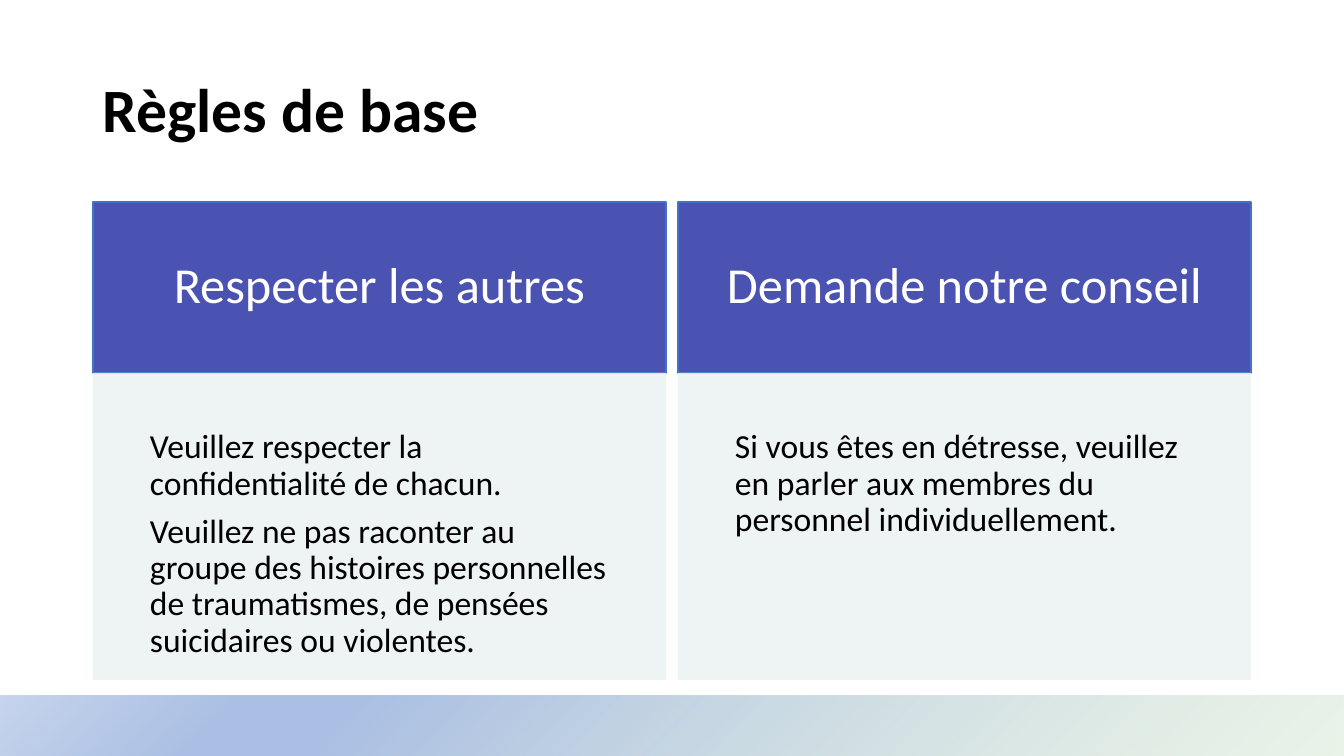
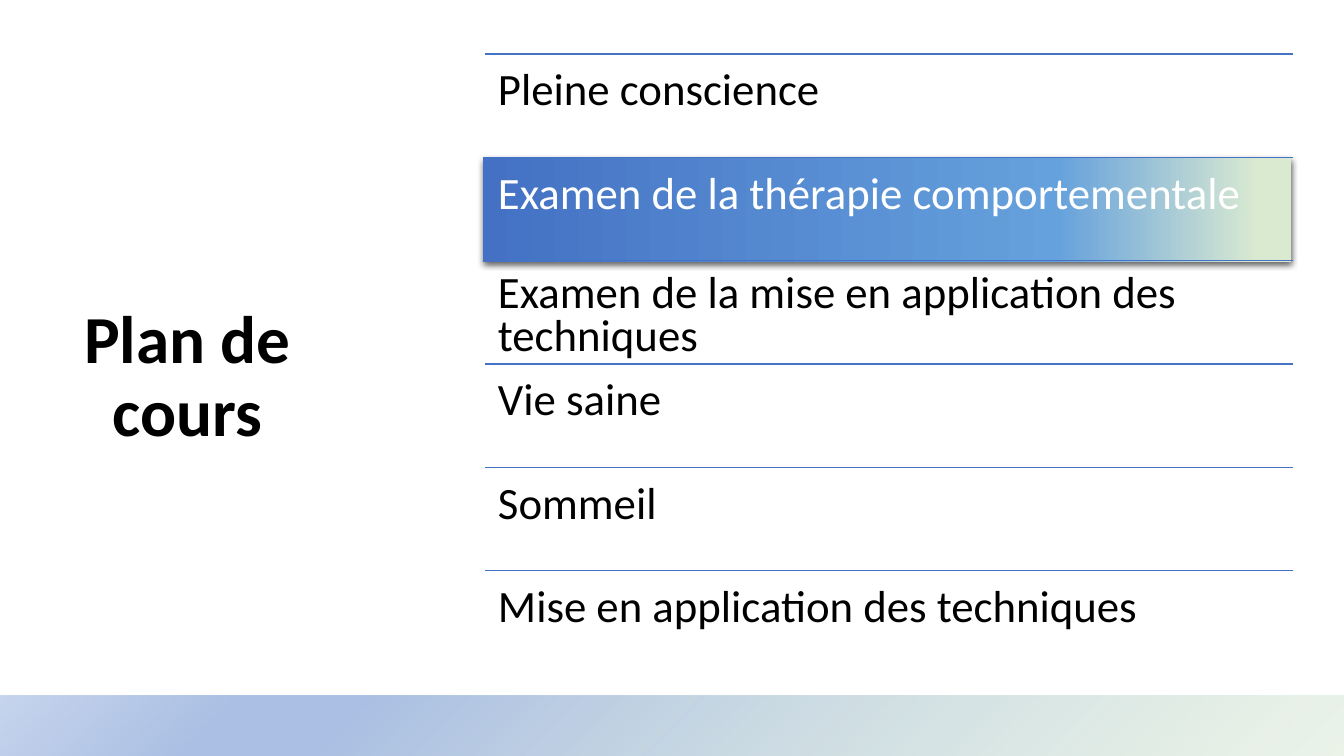
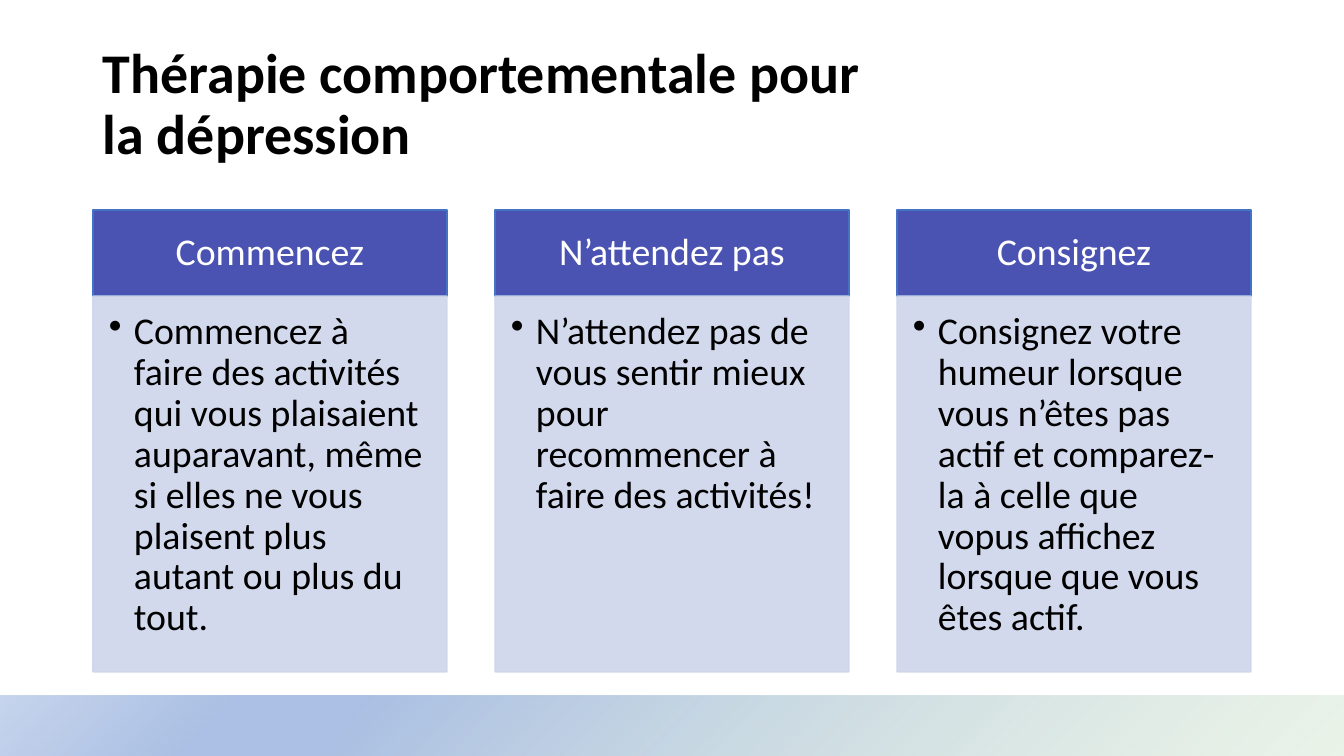
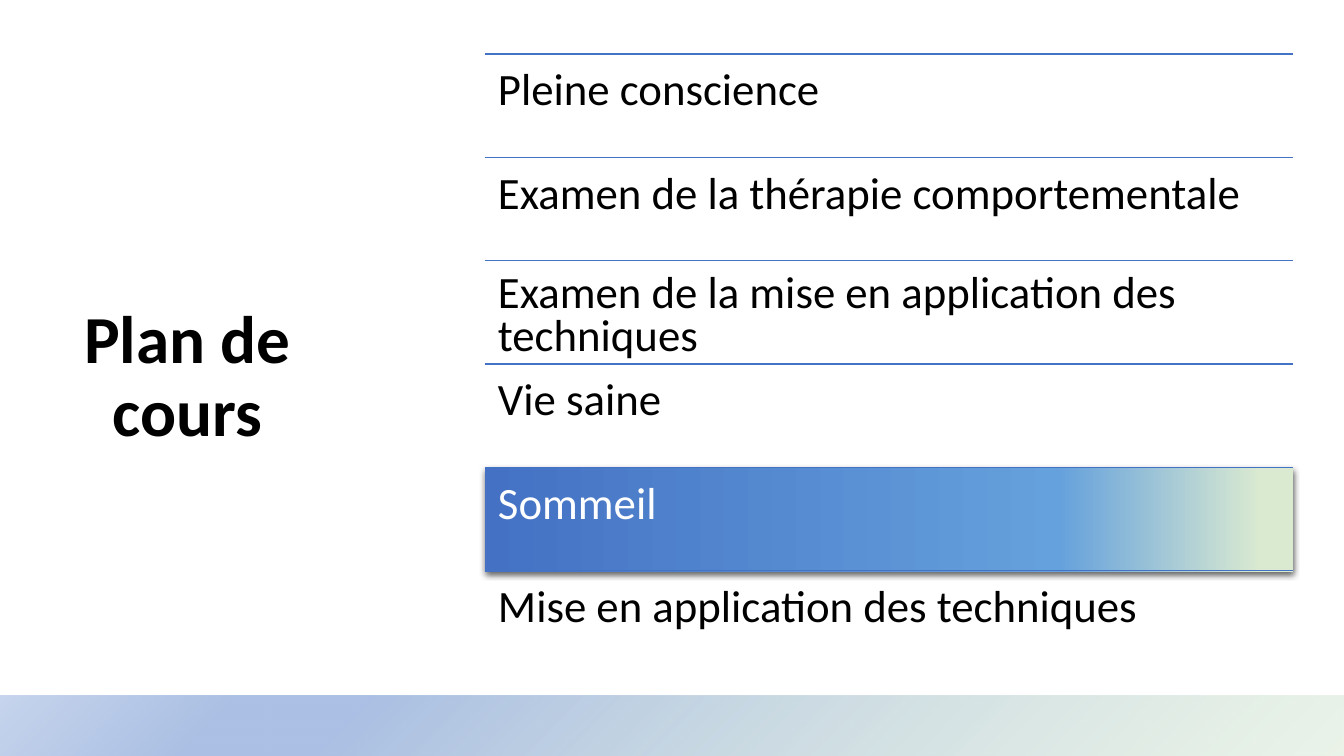
from pptx import Presentation
from pptx.dml.color import RGBColor
from pptx.enum.shapes import MSO_CONNECTOR, MSO_SHAPE
from pptx.enum.text import MSO_ANCHOR, PP_ALIGN
from pptx.oxml import parse_xml
from pptx.oxml.ns import nsdecls, qn
from pptx.util import Emu, Pt

RECT, STRAIGHT = MSO_SHAPE.RECTANGLE, MSO_CONNECTOR.STRAIGHT
TOP, MIDDLE = MSO_ANCHOR.TOP, MSO_ANCHOR.MIDDLE
LEFT, CENTER = PP_ALIGN.LEFT, PP_ALIGN.CENTER

# Shared style
FONT = "Calibri"
COLORS = {
    "black": "000000", "white": "FFFFFF", "header": "4B53B2", "line": "4472C4",
    "mist": "EDF2F2", "lavender": "CFD5EA",
}
BAND_STOPS = [(0, "D6E8D1", 47), (74, "ABC0E4", 100), (83, "ABC0E4", 100), (100, "C7D5ED", 100)]
BAND_PATH = '<a:path path="circle"><a:fillToRect l="100000" t="100000"/></a:path>'
MARK_STOPS = [(0, "4471C4", 100), (71, "65A1DC", 100), (96, "DAEAD1", 100)]
MARK_PATH = '<a:lin ang="0" scaled="0"/>'
MARK_SHADOW = (
    f'<a:outerShdw {nsdecls("a")} blurRad="57150" dist="19050" dir="5400000" algn="ctr" '
    'rotWithShape="0"><a:srgbClr val="000000"><a:alpha val="63000"/></a:srgbClr></a:outerShdw>'
)

# Lengths in px
SLIDE_W, SLIDE_H = 1344, 756
BAND = (0, 696, SLIDE_W, 60)
PANEL_LEFT, PANEL_RIGHT = 93, 1251
AGENDA_LEFT, AGENDA_TOP, AGENDA_W, AGENDA_H = 485, 54, 808, 620
AGENDA_TITLE = (61, 305, 253, 146)

# Content
RULES = {
    "title": "Règles de base", "title_box": (PANEL_LEFT, 40, 1159, 146), "title_size": 44,
    "gap": 12, "top": 202, "head_h": 171, "body_h": 307,
    "head": {"size": 36, "inset": (45, 45, 45, 45)},
    "body": {"size": 24, "inset": (57, 57, 57, 57), "after": 8.4},
    "fill": "mist", "border": None,
    "columns": [
        ("Respecter les autres",
         ["Veuillez respecter la confidentialité de chacun.",
          "Veuillez ne pas raconter au groupe des histoires personnelles de traumatismes, "
          "de pensées suicidaires ou violentes."]),
        ("Demande notre conseil",
         ["Si vous êtes en détresse, veuillez en parler aux membres du personnel "
          "individuellement."]),
    ],
}
THERAPY = {
    "title": "Thérapie comportementale pour la dépression",
    "title_box": (PANEL_LEFT, 33, 830, 146), "title_size": 40,
    "gap": 48, "top": 210, "head_h": 86, "body_h": 376,
    "head": {"size": 27, "inset": (21, 12, 21, 12)},
    "body": {"size": 27, "inset": (16, 16, 21, 24), "bullet": "•"},
    "fill": "lavender", "border": "lavender",
    "columns": [
        ("Commencez",
         ["Commencez à faire des activités qui vous plaisaient auparavant, même si elles "
          "ne vous plaisent plus autant ou plus du tout."]),
        ("N’attendez pas",
         ["N’attendez pas de vous sentir mieux pour recommencer à faire des activités!"]),
        ("Consignez",
         ["Consignez votre humeur lorsque vous n’êtes pas actif et comparez-la à celle que "
          "vopus affichez lorsque que vous êtes actif."]),
    ],
}
AGENDA = [  # text, line spacing
    ("Pleine conscience", 0.9),
    ("Examen de la thérapie comportementale", 0.9),
    ("Examen de la mise en application des techniques", 0.8),
    ("Vie saine", 0.9),
    ("Sommeil", 0.9),
    ("Mise en application des techniques", 0.9),
]


def px(n):
    return Emu(round(n * 914400 / 100.8))


def rgb(name):
    return RGBColor.from_string(COLORS[name])


def write(shape, text, size=32, color="black", bold=False, align=LEFT, anchor=TOP,
          inset=(10, 5, 10, 5), spacing=0.9, after=0, bullet=None):
    """Fill a shape with one paragraph per string."""
    tf = shape.text_frame
    tf.word_wrap = True
    tf.vertical_anchor = anchor
    tf.margin_left, tf.margin_top, tf.margin_right, tf.margin_bottom = map(px, inset)
    for i, line in enumerate([text] if isinstance(text, str) else text):
        p = tf.add_paragraph() if i else tf.paragraphs[0]
        if bullet:
            pPr = p._p.get_or_add_pPr()
            pPr.set("marL", str(px(25)))
            pPr.set("indent", str(px(-25)))
            pPr.append(parse_xml(f'<a:buChar {nsdecls("a")} char="{bullet}"/>'))
        p.alignment, p.line_spacing, p.space_after = align, spacing, Pt(after)
        r = p.add_run()
        r.text = line
        r.font.name, r.font.size, r.font.bold = FONT, Pt(size), bold
        r.font.color.rgb = rgb(color)


def add_text(s, box, text, **style):
    write(s.shapes.add_textbox(*map(px, box)), text, **style)


def add_rect(s, box, fill=None, border=None, alpha=100):
    sp = s.shapes.add_shape(RECT, *map(px, box))
    sp.shadow.inherit = False
    if fill:
        sp.fill.solid()
        sp.fill.fore_color.rgb = rgb(fill)
    else:
        sp.fill.background()
    if border:
        sp.line.color.rgb = rgb(border)
        sp.line.width = Pt(1)
    else:
        sp.line.fill.background()
    if alpha < 100:
        for clr in sp.element.spPr.iter(qn("a:srgbClr")):
            clr.append(parse_xml(f'<a:alpha {nsdecls("a")} val="{alpha * 1000}"/>'))
    return sp


def add_gradient_rect(s, box, stops, direction):
    sp = add_rect(s, box)
    gs = "".join(
        f'<a:gs pos="{pos * 1000}"><a:srgbClr val="{clr}"><a:alpha val="{alpha * 1000}"/>'
        "</a:srgbClr></a:gs>" for pos, clr, alpha in stops)
    spPr = sp.element.spPr
    spPr.replace(spPr.find(qn("a:noFill")), parse_xml(
        f'<a:gradFill {nsdecls("a")} rotWithShape="1"><a:gsLst>{gs}</a:gsLst>{direction}</a:gradFill>'))
    return sp


def add_line(s, x1, x2, y):
    line = s.shapes.add_connector(STRAIGHT, px(x1), px(y), px(x2), px(y))
    line.line.color.rgb = rgb("line")
    line.line.width = Pt(1)
    line.element.spPr.append(parse_xml(f'<a:effectLst {nsdecls("a")}/>'))


def panel_slide(s, d):
    add_text(s, d["title_box"], d["title"], size=d["title_size"], bold=True, anchor=MIDDLE)
    n = len(d["columns"])
    width = (PANEL_RIGHT - PANEL_LEFT - (n - 1) * d["gap"]) / n
    for i, (head, body) in enumerate(d["columns"]):
        x = PANEL_LEFT + i * (width + d["gap"])
        header = add_rect(s, (x, d["top"], width, d["head_h"]), "header", "line")
        write(header, head, color="white", align=CENTER, anchor=MIDDLE, **d["head"])
        panel = add_rect(s, (x, d["top"] + d["head_h"], width, d["body_h"]),
                         d["fill"], d["border"], alpha=90)
        write(panel, body, **d["body"])


def agenda_slide(s, current, mark_left=AGENDA_LEFT):
    row_h = AGENDA_H / len(AGENDA)
    # Highlight behind the current item
    mark = add_gradient_rect(s, (mark_left, AGENDA_TOP + current * row_h, AGENDA_W, 105),
                             MARK_STOPS, MARK_PATH)
    mark.element.spPr.find(qn("a:effectLst")).append(parse_xml(MARK_SHADOW))
    add_text(s, AGENDA_TITLE, "Plan de cours", size=48, bold=True, align=CENTER, anchor=MIDDLE)
    # Ruled list
    for i, (item, spacing) in enumerate(AGENDA):
        y = AGENDA_TOP + i * row_h
        add_line(s, AGENDA_LEFT, AGENDA_LEFT + AGENDA_W, y)
        add_text(s, (AGENDA_LEFT, y, AGENDA_W, row_h), item, spacing=spacing,
                 color="white" if i == current else "black", inset=(13, 13, 13, 13))


def main():
    prs = Presentation()
    prs.slide_width, prs.slide_height = px(SLIDE_W), px(SLIDE_H)
    layout = prs.slide_layouts[6]
    rules, plan, therapy, plan_sleep = [prs.slides.add_slide(layout) for _ in range(4)]

    # The footer band moves to the layout, so every slide shows it
    band = add_gradient_rect(rules, BAND, BAND_STOPS, BAND_PATH)
    layout.shapes.element.append(band.element)

    panel_slide(rules, RULES)
    agenda_slide(plan, current=1, mark_left=483)
    panel_slide(therapy, THERAPY)
    agenda_slide(plan_sleep, current=4)
    prs.save("out.pptx")


if __name__ == "__main__":
    main()
